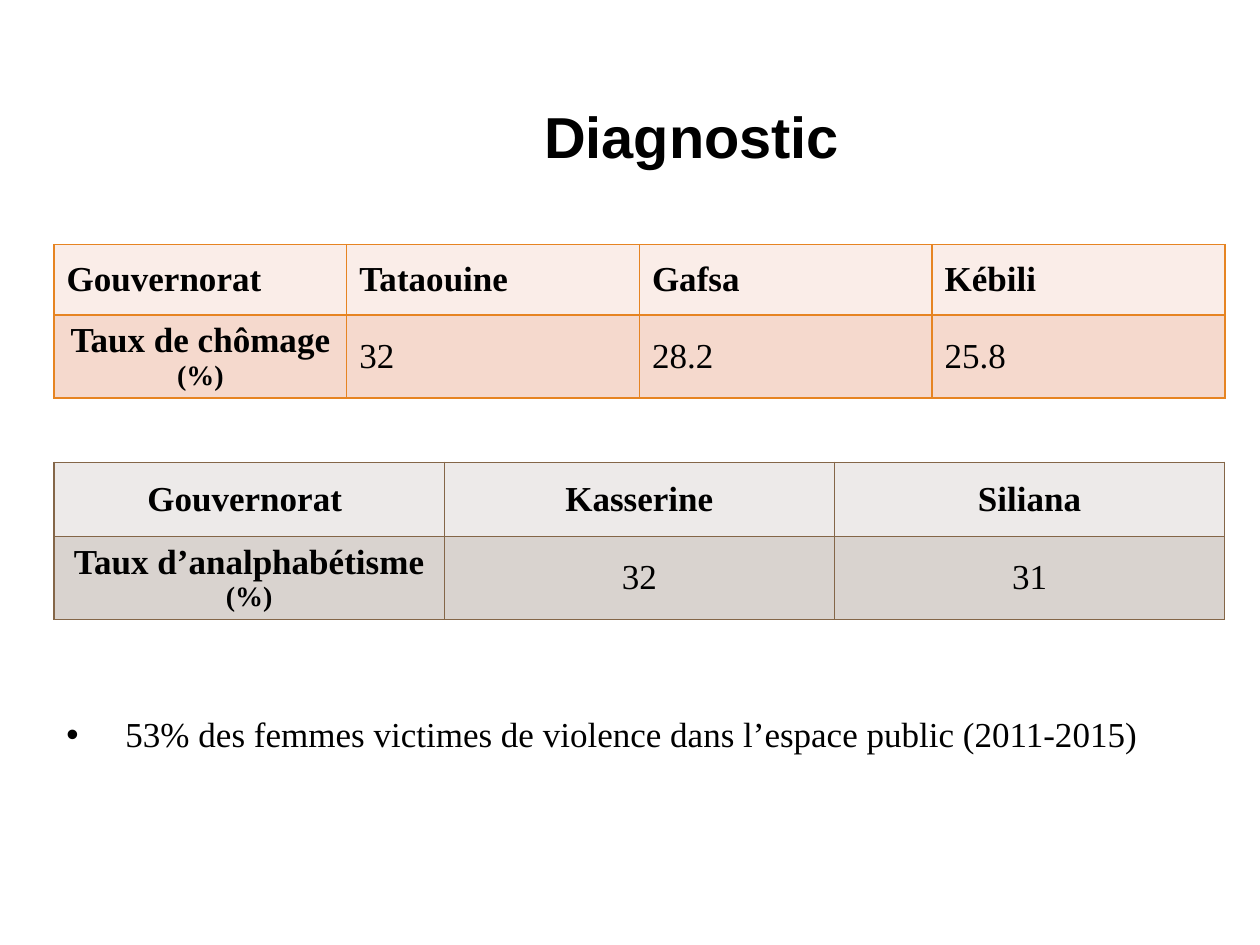
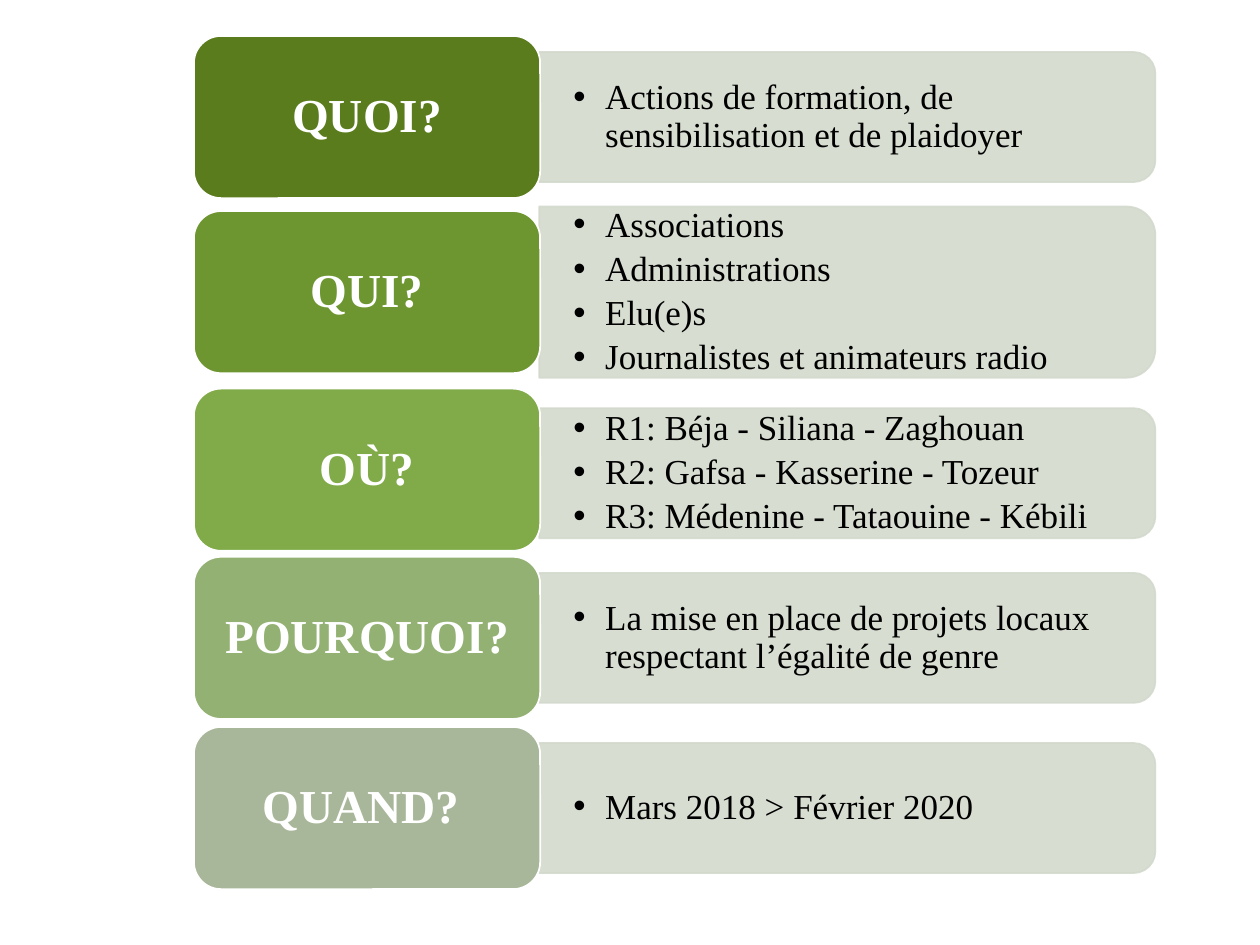
from dataclasses import dataclass

from lxml.etree import SubElement
from pptx import Presentation
from pptx.dml.color import RGBColor
from pptx.enum.shapes import MSO_SHAPE as Kind
from pptx.enum.text import MSO_ANCHOR as Anchor, PP_ALIGN as Align
from pptx.oxml.ns import qn
from pptx.util import Cm, Pt


@dataclass(frozen=True)
class Theme:
    head: str = "Arial"
    body: str = "Times New Roman"
    ink: str = "000000"
    white: str = "FFFFFF"
    panel: str = "D3DACD"
    title: int = 33
    label: int = 27
    text: int = 20
    unit: int = 16
    lead: float = 0.9


THEME = Theme()

TITLE = "Diagnostic"
FACT = "53% des femmes victimes de violence dans l’espace public (2011-2015)"

# Tables: top and row heights in cm, border, row fills, alignment, cells
TABLES = [
    dict(top=4.93, tall=(1.42, 1.67), edge="E68422", fills=("FAEDE8", "F5D9CD"),
         align=Align.LEFT, head=["Gouvernorat", "Tataouine", "Gafsa", "Kébili"],
         label="Taux de chômage ", data=["32", "28.2", "25.8"]),
    dict(top=9.32, tall=(1.5, 1.66), edge="846648", fills=("EDEAE9", "D9D3CF"),
         align=Align.CENTER, head=["Gouvernorat ", "Kasserine", "Siliana"],
         label="Taux d’analphabétisme ", data=["32", "31"]),
]

# Rows: question, colour, tile middle, panel middle, panel height (cm), answers
ROWS = [
    ("QUOI?", "5A7C1C", 2.36, 2.36, 2.62,
     ["Actions de formation, de sensibilisation et de plaidoyer"]),
    ("QUI?", "6E9630", 5.89, 5.89, 3.45,
     ["Associations", "Administrations", "Elu(e)s",
      "Journalistes et animateurs radio"]),
    ("OÙ?", "81AB49", 9.47, 9.54, 2.62,
     ["R1: Béja - Siliana - Zaghouan", "R2: Gafsa - Kasserine - Tozeur",
      "R3: Médenine - Tataouine - Kébili"]),
    ("POURQUOI?", "93B172", 12.86, 12.86, 2.62,
     ["La mise en place de projets locaux respectant l’égalité de genre"]),
    ("QUAND? ", "A8B799", 16.29, 16.29, 2.62, ["Mars 2018 > Février 2020"]),
]

LEFT, WIDTH = 1.09, 23.6
TILE_X, TILE_W, TILE_H = 3.91, 6.98, 3.27
PANEL_X, PANEL_W = TILE_X + TILE_W - 0.02, 12.42


def rgb(code):
    return RGBColor.from_string(code)


def add_run(para, text, size=THEME.text, bold=False, color=THEME.ink,
            face=THEME.body):
    run = para.add_run()
    run.text = text
    font = run.font
    font.name, font.size, font.bold = face, Pt(size), bold
    font.color.rgb = rgb(color)


def add_list(slide, box, items, inset, hang):
    """Write bulleted items, centred vertically in box (cm)."""
    frame = slide.shapes.add_textbox(*map(Cm, box)).text_frame
    frame.word_wrap = True
    frame.vertical_anchor = Anchor.MIDDLE
    frame.margin_left = frame.margin_right = Cm(inset)
    frame.margin_top = frame.margin_bottom = 0
    for i, item in enumerate(items):
        para = frame.paragraphs[0] if i == 0 else frame.add_paragraph()
        props = para._p.get_or_add_pPr()
        props.set("marL", str(Cm(hang)))
        props.set("indent", str(-Cm(hang)))
        SubElement(props, qn("a:buFont"), typeface=THEME.head)
        SubElement(props, qn("a:buChar"), char="•")
        para.line_spacing = THEME.lead
        if i < len(items) - 1:
            para.space_after = Pt(3.6)
        add_run(para, item)


def add_block(slide, kind, box, fill, edge):
    shape = slide.shapes.add_shape(kind, *map(Cm, box))
    shape.shadow.inherit = False
    shape.fill.solid()
    shape.fill.fore_color.rgb = rgb(fill)
    shape.line.color.rgb = rgb(edge)
    shape.line.width = Pt(1)
    return shape


def paint(cell, fill, edge):
    """Give a cell its border and fill."""
    props = cell._tc.get_or_add_tcPr()
    for side in ("a:lnL", "a:lnR", "a:lnT", "a:lnB"):
        line = SubElement(props, qn(side), w=str(Pt(1)))
        SubElement(SubElement(line, qn("a:solidFill")), qn("a:srgbClr"), val=edge)
    cell.fill.solid()
    cell.fill.fore_color.rgb = rgb(fill)
    cell.vertical_anchor = Anchor.MIDDLE


def add_grid(slide, top, tall, edge, fills, align, head, label, data):
    cols = len(head)
    grid = slide.shapes.add_table(2, cols, Cm(LEFT), Cm(top), Cm(WIDTH),
                                  Cm(sum(tall))).table
    grid.first_row = grid.horz_banding = False
    for col in grid.columns:
        col.width = Cm(WIDTH / cols)
    for r, texts in enumerate((head, [label] + data)):
        grid.rows[r].height = Cm(tall[r])
        for c, text in enumerate(texts):
            cell = grid.cell(r, c)
            paint(cell, fills[r], edge)
            para = cell.text_frame.paragraphs[0]
            para.alignment = align
            add_run(para, text, bold=r == 0 or c == 0)
            if r == 1 and c == 0:
                para.alignment = Align.CENTER
                add_run(para, "(%)", THEME.unit, True)


def add_row(slide, ask, color, mid, axis, tall, items):
    # Turned a quarter, so that the two round corners face right
    panel = add_block(slide, Kind.ROUND_2_SAME_RECTANGLE,
                      (PANEL_X + (PANEL_W - tall) / 2, axis - PANEL_W / 2,
                       tall, PANEL_W), THEME.panel, THEME.panel)
    panel.rotation = 90
    for tint in panel.element.spPr.iter(qn("a:srgbClr")):
        SubElement(tint, qn("a:alpha"), val="90000")
    add_list(slide, (PANEL_X, axis - tall / 2, PANEL_W - 0.12, tall),
             items, 0.69, 0.64)

    tile = add_block(slide, Kind.ROUNDED_RECTANGLE,
                     (TILE_X, mid - TILE_H / 2, TILE_W, TILE_H),
                     color, THEME.white)
    frame = tile.text_frame
    frame.word_wrap = True
    frame.vertical_anchor = Anchor.MIDDLE
    para = frame.paragraphs[0]
    para.alignment = Align.CENTER
    para.line_spacing = THEME.lead
    add_run(para, ask, THEME.label, True, THEME.white)


def show_facts(deck):
    slide = deck.slides.add_slide(deck.slide_layouts[5])
    title = slide.shapes.title
    title.left, title.top, title.width, title.height = map(
        Cm, (4.09, 0.91, 19.71, 3.81))
    title.text_frame.vertical_anchor = Anchor.MIDDLE
    para = title.text_frame.paragraphs[0]
    para.alignment = Align.CENTER
    para.line_spacing = THEME.lead
    add_run(para, TITLE, THEME.title, True, face=THEME.head)
    for spec_row in TABLES:
        add_grid(slide, **spec_row)
    add_list(slide, (LEFT, 14.2, WIDTH, 1.3), [FACT], 0.25, 1.19)


def show_plan(deck):
    slide = deck.slides.add_slide(deck.slide_layouts[6])
    for row in ROWS:
        add_row(slide, *row)


def main():
    deck = Presentation()
    deck.slide_width, deck.slide_height = Cm(25.4), Cm(19.05)
    show_facts(deck)
    show_plan(deck)
    deck.save("out.pptx")


if __name__ == "__main__":
    main()
